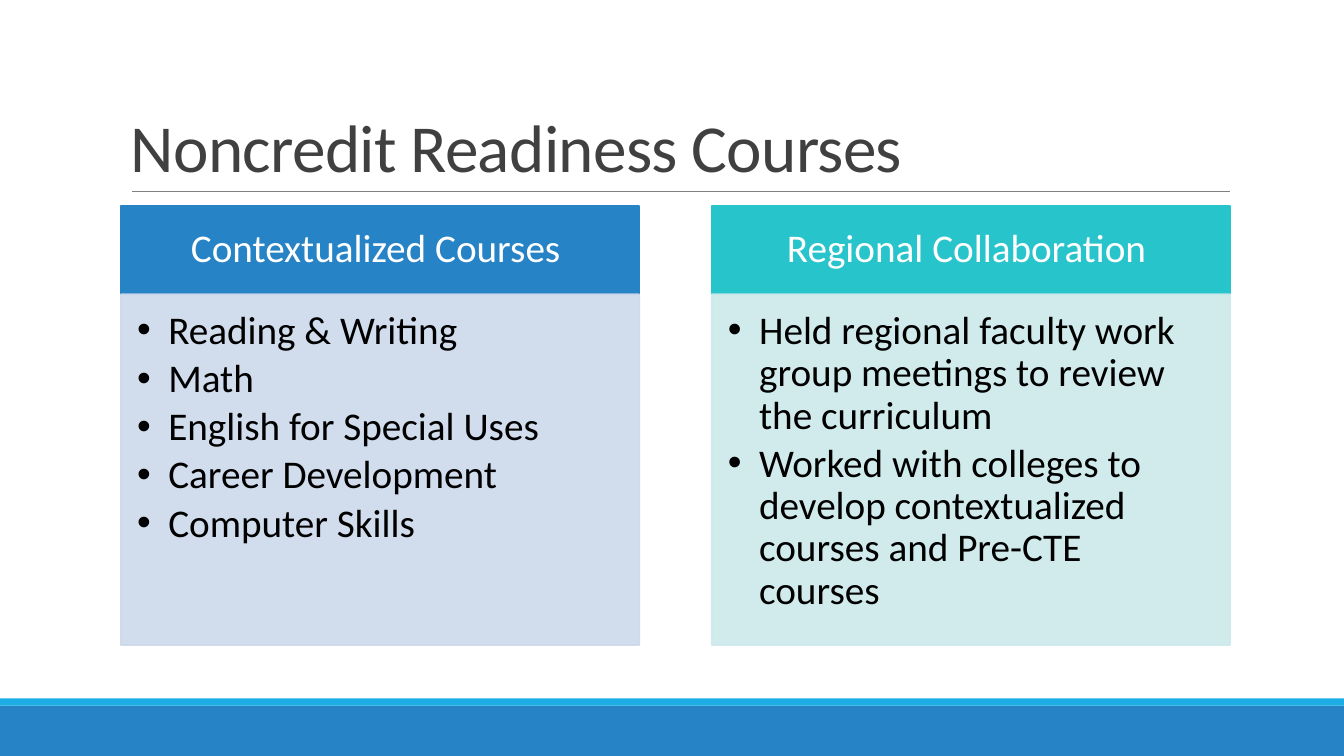
from lxml import etree
from pptx import Presentation
from pptx.dml.color import RGBColor
from pptx.enum.shapes import MSO_CONNECTOR, MSO_SHAPE
from pptx.enum.text import MSO_ANCHOR, PP_ALIGN
from pptx.oxml.ns import qn
from pptx.util import Inches, Pt

RECTANGLE, STRAIGHT = MSO_SHAPE.RECTANGLE, MSO_CONNECTOR.STRAIGHT
TOP, MIDDLE, BOTTOM = MSO_ANCHOR.TOP, MSO_ANCHOR.MIDDLE, MSO_ANCHOR.BOTTOM
LEFT, CENTER = PP_ALIGN.LEFT, PP_ALIGN.CENTER

BLUE = RGBColor(0x26, 0x83, 0xC6)
SKY = RGBColor(0x1C, 0xAD, 0xE4)
TEAL = RGBColor(0x28, 0xC4, 0xCC)
PALE_BLUE = RGBColor(0xCD, 0xD9, 0xEA)
PALE_TEAL = RGBColor(0xCD, 0xE9, 0xEC)
CHARCOAL = RGBColor(0x40, 0x40, 0x40)
GRAY = RGBColor(0x80, 0x80, 0x80)
BLACK = RGBColor(0, 0, 0)
WHITE = RGBColor(255, 255, 255)

TITLE = "Noncredit Readiness Courses"
COLUMNS = [
    ("Contextualized Courses ", BLUE, PALE_BLUE, [
        "Reading & Writing",
        "Math",
        "English for Special Uses",
        "Career Development",
        "Computer Skills",
    ]),
    ("Regional Collaboration ", TEAL, PALE_TEAL, [
        "Held regional faculty work group meetings to review the curriculum",
        "Worked with colleges to develop contextualized courses and Pre-CTE courses",
    ]),
]

WIDTH, HEIGHT = 13.33, 7.5
MARGIN, CONTENT_WIDTH = 1.2, 11
COLUMN_WIDTH, GUTTER = 5.14, 0.72
HEADER_TOP, HEADER_HEIGHT, PANEL_HEIGHT = 2.04, 0.88, 3.48
FOOTER_HEIGHT, STRIP_HEIGHT = 0.5, 0.07
RULE_Y, RULE_INSET = 1.9, 0.11
TITLE_TOP = 0.31
INDENT = 0.31

deck = Presentation()
deck.slide_width, deck.slide_height = Inches(WIDTH), Inches(HEIGHT)
slide = deck.slides.add_slide(deck.slide_layouts[6])


def add_block(left, top, width, height, color, outlined=False, opacity=100):
    block = slide.shapes.add_shape(RECTANGLE, *map(Inches, (left, top, width, height)))
    block.shadow.inherit = False
    block.fill.solid()
    block.fill.fore_color.rgb = color
    if outlined:
        block.line.color.rgb = color
        block.line.width = Pt(1.25)
    else:
        block.line.fill.background()
    if opacity < 100:
        for tint in block._element.spPr.iter(qn("a:srgbClr")):
            etree.SubElement(tint, qn("a:alpha"), val=str(opacity * 1000))
    return block


def write(holder, lines, size=28, color=BLACK, align=LEFT, anchor=TOP, insets=(0.1, 0.05, 0.1, 0.05),
          line_spacing=0.9, space_after=0, tracking=0, bulleted=False):
    frame = holder.text_frame
    frame.word_wrap = True
    frame.vertical_anchor = anchor
    frame.margin_left, frame.margin_top, frame.margin_right, frame.margin_bottom = map(Inches, insets)
    for index, line in enumerate(lines):
        paragraph = frame.add_paragraph() if index else frame.paragraphs[0]
        paragraph.alignment = align
        paragraph.line_spacing = line_spacing
        paragraph.space_after = Pt(space_after)
        if bulleted:
            properties = paragraph._p.get_or_add_pPr()
            properties.set("marL", str(Inches(INDENT)))
            properties.set("indent", str(-Inches(INDENT)))
            etree.SubElement(properties, qn("a:buFont"), typeface="Arial")
            etree.SubElement(properties, qn("a:buChar"), char="•")
        run = paragraph.add_run()
        run.text = line
        run.font.name = "Calibri"
        run.font.size = Pt(size)
        run.font.color.rgb = color
        if tracking:
            run._r.get_or_add_rPr().set("spc", str(int(tracking * 100)))


footer_top = HEIGHT - FOOTER_HEIGHT
add_block(0, footer_top, WIDTH, FOOTER_HEIGHT, BLUE)
add_block(0, footer_top - STRIP_HEIGHT, WIDTH, STRIP_HEIGHT, SKY)

rule_left = MARGIN + RULE_INSET
rule_right = MARGIN + CONTENT_WIDTH
rule = slide.shapes.add_connector(STRAIGHT, *map(Inches, (rule_left, RULE_Y, rule_right, RULE_Y)))
rule.line.color.rgb = GRAY
rule.line.width = Pt(0.5)
etree.SubElement(rule._element.spPr, qn("a:effectLst"))

title = slide.shapes.add_textbox(*map(Inches, (MARGIN, TITLE_TOP, CONTENT_WIDTH, RULE_Y - TITLE_TOP)))
write(title, [TITLE], size=48, color=CHARCOAL, anchor=BOTTOM, line_spacing=0.85, tracking=-0.5)

for column, (heading, strong, pale, points) in enumerate(COLUMNS):
    left = MARGIN + column * (COLUMN_WIDTH + GUTTER)
    header = add_block(left, HEADER_TOP, COLUMN_WIDTH, HEADER_HEIGHT, strong, outlined=True)
    write(header, [heading], color=WHITE, align=CENTER, anchor=MIDDLE, insets=(0.22, 0.12, 0.22, 0.12))
    panel = add_block(left, HEADER_TOP + HEADER_HEIGHT, COLUMN_WIDTH, PANEL_HEIGHT, pale,
                      outlined=True, opacity=90)
    write(panel, points, insets=(0.16, 0.16, 0.22, 0.24), space_after=4.2, bulleted=True)

deck.save("out.pptx")
